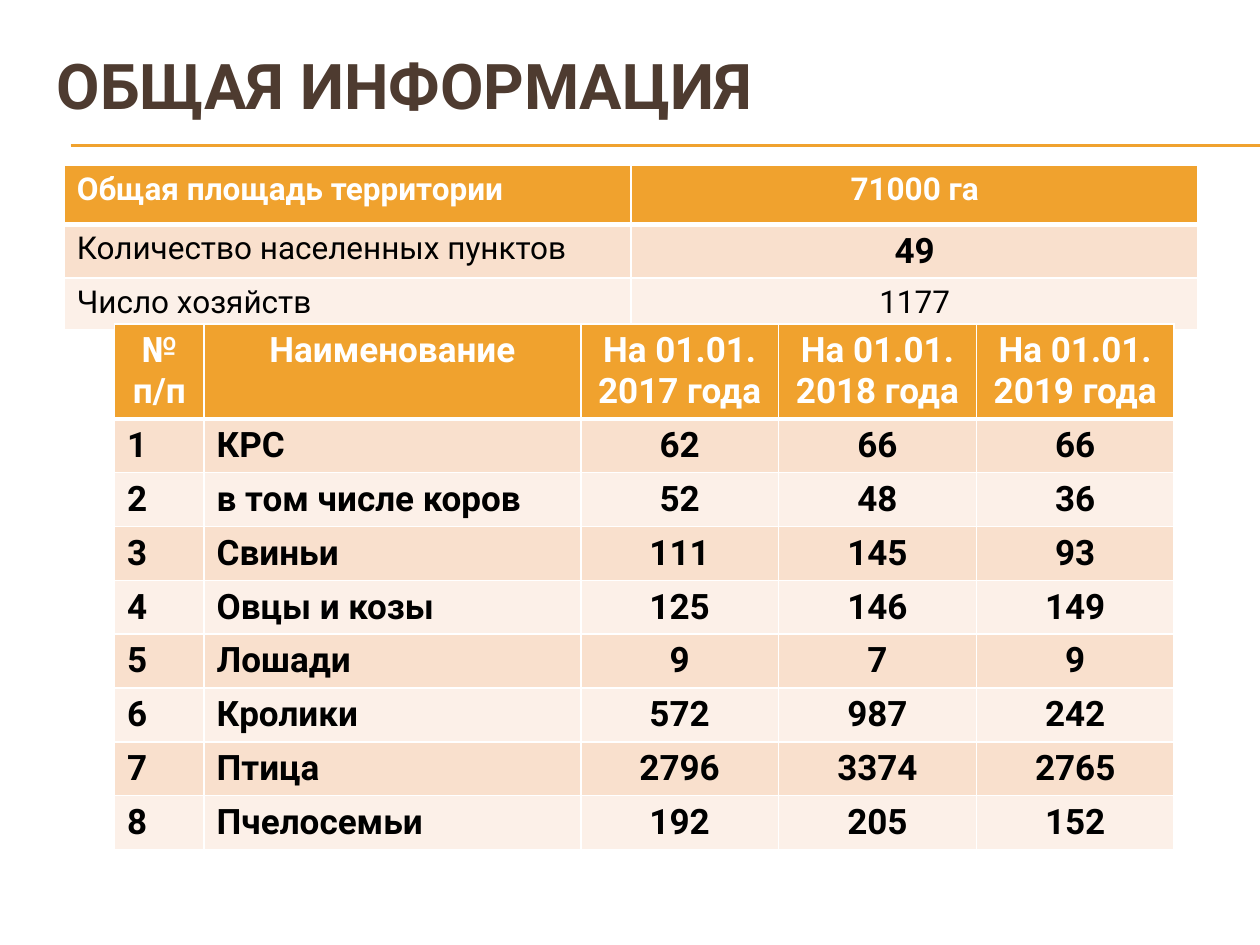
from lxml.etree import SubElement
from pptx import Presentation
from pptx.dml.color import RGBColor
from pptx.enum.shapes import MSO_CONNECTOR
from pptx.enum.text import MSO_ANCHOR, PP_ALIGN
from pptx.oxml.ns import qn
from pptx.util import Inches, Pt

FONT = "Roboto"
BROWN = RGBColor(0x4E, 0x3B, 0x30)
ORANGE = RGBColor(0xF0, 0xA2, 0x2E)
PEACH = RGBColor(0xF9, 0xE0, 0xCD)
CREAM = RGBColor(0xFC, 0xF0, 0xE8)
WHITE = RGBColor(0xFF, 0xFF, 0xFF)
BLACK = RGBColor(0, 0, 0)

# Content
TITLE = "ОБЩАЯ ИНФОРМАЦИЯ"
TERRITORY = [
    ("Общая площадь территории", "71000 га"),
    ("Количество населенных пунктов", "49"),
    ("Число хозяйств", "1177"),
]
LIVESTOCK = [
    ("№ п/п", "Наименование", "На 01.01. 2017 года", "На 01.01. 2018 года",
     "На 01.01.\n2019 года"),
    ("1", "КРС", "62", "66", "66"),
    ("2", "в том числе коров", "52", "48", "36"),
    ("3", "Свиньи", "111", "145", "93"),
    ("4", "Овцы и козы", "125", "146", "149"),
    ("5", "Лошади", "9", "7", "9"),
    ("6", "Кролики", "572", "987", "242"),
    ("7", "Птица", "2796", "3374", "2765"),
    ("8", "Пчелосемьи", "192", "205", "152"),
]


def add_run(p, text, size, color, bold):
    r = p.add_run()
    r.text = text
    r.font.name, r.font.size, r.font.bold = FONT, Pt(size), bold
    r.font.color.rgb = color


def set_borders(cell, row):
    """White grid, with a heavier rule under the header row."""
    widths = {"L": 1, "R": 1, "T": 3 if row == 1 else 1, "B": 3 if row == 0 else 1}
    tc_pr = cell._tc.get_or_add_tcPr()
    for side, width in widths.items():
        ln = SubElement(tc_pr, qn(f"a:ln{side}"), w=str(Pt(width)))
        SubElement(SubElement(ln, qn("a:solidFill")), qn("a:srgbClr"), val=str(WHITE))


def add_grid(slide, left, top, col_widths, row_heights, rows, style, centred):
    """style(row, col) gives size and bold; centred(row, col) gives alignment."""
    table = slide.shapes.add_table(
        len(rows), len(col_widths), Inches(left), Inches(top),
        Inches(sum(col_widths)), Inches(sum(row_heights))).table
    for column, width in zip(table.columns, col_widths):
        column.width = Inches(width)
    for i, values in enumerate(rows):
        table.rows[i].height = Inches(row_heights[i])
        for j, text in enumerate(values):
            cell = table.cell(i, j)
            set_borders(cell, i)
            cell.fill.solid()
            cell.fill.fore_color.rgb = ORANGE if i == 0 else PEACH if i % 2 else CREAM
            tf = cell.text_frame
            for k, line in enumerate(text.split("\n")):
                p = tf.add_paragraph() if k else tf.paragraphs[0]
                p.alignment = PP_ALIGN.CENTER if centred(i, j) else PP_ALIGN.LEFT
                size, bold = style(i, j)
                add_run(p, line, size, BLACK if i else WHITE, bold)


def main():
    prs = Presentation()
    prs.slide_width, prs.slide_height = Inches(10), Inches(7.5)
    s = prs.slides.add_slide(prs.slide_layouts[5])

    # Double rule under the title
    for y in (1.15, 1.16):
        line = s.shapes.add_connector(
            MSO_CONNECTOR.STRAIGHT, Inches(0.56), Inches(y), Inches(10), Inches(y))
        line.line.color.rgb = ORANGE
        line.line.width = Pt(0.75)
        SubElement(line._element.spPr, qn("a:effectLst"))

    # Title
    title = s.shapes.title
    title.left, title.top = Inches(0.35), Inches(0.21)
    title.width, title.height = Inches(9.5), Inches(0.92)
    tf = title.text_frame
    tf.vertical_anchor = MSO_ANCHOR.MIDDLE
    p = tf.paragraphs[0]
    p.alignment = PP_ALIGN.LEFT
    add_run(p, TITLE, 36, BROWN, True)

    # Territory: the number of settlements stands out
    add_grid(s, 0.51, 1.31, [4.5] * 2, [0.47, 0.41, 0.41], TERRITORY,
             style=lambda i, j: (20, True) if (i, j) == (1, 1) else (18, i == 0),
             centred=lambda i, j: j == 1)

    # Livestock by year
    add_grid(s, 0.91, 2.57, [0.71, 2.99] + [1.57] * 3, [0.41] * len(LIVESTOCK),
             LIVESTOCK,
             style=lambda i, j: (20, True),
             centred=lambda i, j: i == 0 or j >= 2)

    prs.save("out.pptx")


if __name__ == "__main__":
    main()
